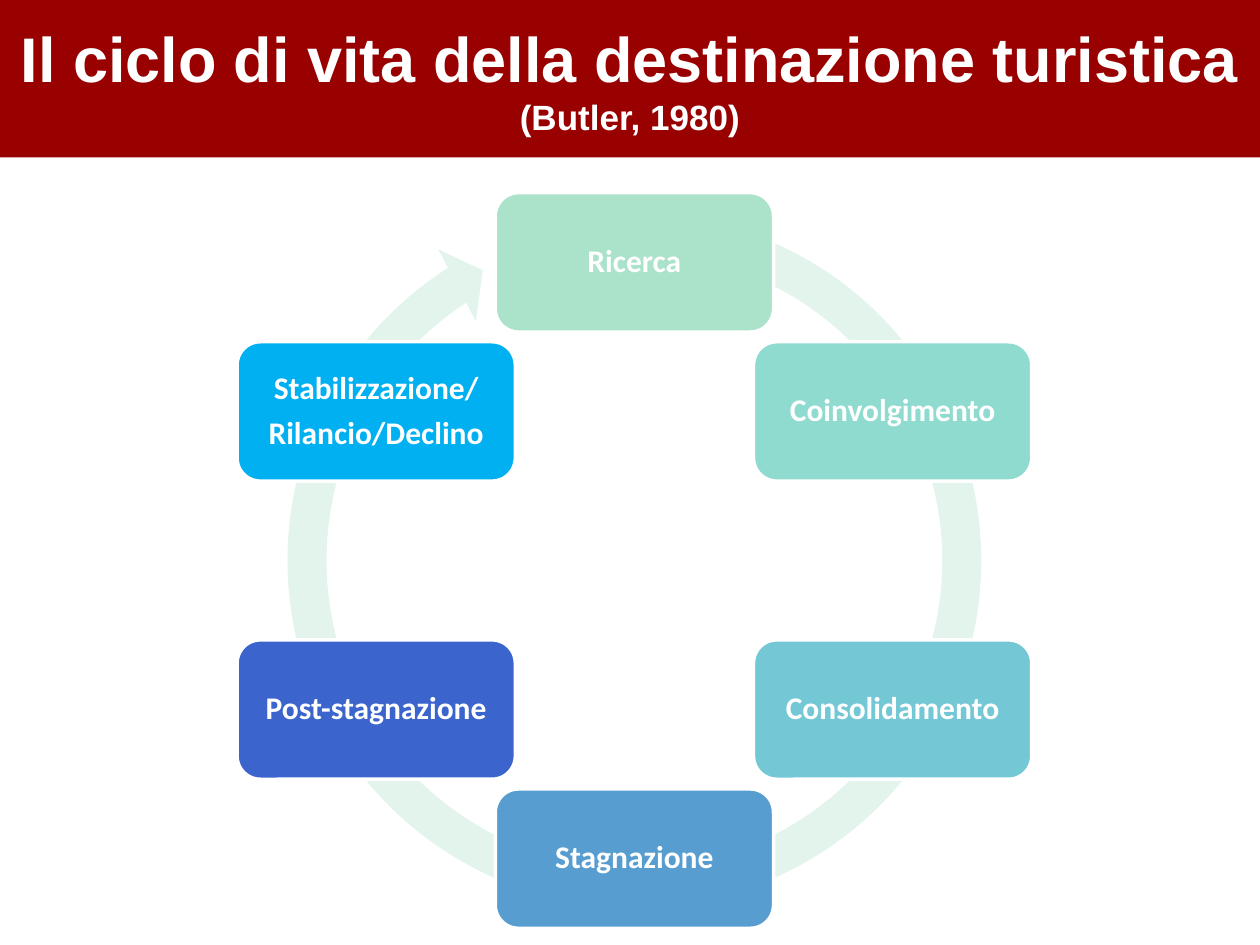
from math import cos, radians, sin

from pptx import Presentation
from pptx.dml.color import RGBColor
from pptx.enum.shapes import MSO_SHAPE as Shape
from pptx.enum.text import MSO_ANCHOR as Anchor, PP_ALIGN as Align
from pptx.util import Cm, Pt

COLORS = {
    "banner": "990000",
    "ring": "E2F4EC",
    "white": "FFFFFF",
    "ricerca": "AAE2CA",
    "coinvolgimento": "90DBD0",
    "consolidamento": "74C7D5",
    "stagnazione": "589DD0",
    "post": "3B65CC",
    "esito": "00B0F0",
}

# Stages run clockwise from the top: colour name and lines of text
STAGES = [
    ("ricerca", ["Ricerca"]),
    ("coinvolgimento", ["Coinvolgimento"]),
    ("consolidamento", ["Consolidamento"]),
    ("stagnazione", ["Stagnazione"]),
    ("post", ["Post-stagnazione"]),
    ("esito", ["Stabilizzazione/", "Rilancio/Declino"]),
]

# Cycle geometry in centimetres
CENTER_X, CENTER_Y = 12.79, 11.3
RADIUS = 6.01
BOX_WIDTH, BOX_HEIGHT = 5.61, 2.81
RING_SIZE = 14.83
RING_ADJUSTMENTS = (0.053, 3.126, 142.325, 171.245, 0.055)


def color(name):
    return RGBColor.from_string(COLORS[name])


def add_box(page, kind, left, top, width, height, fill, line=None):
    box = page.shapes.add_shape(kind, Cm(left), Cm(top), Cm(width), Cm(height))
    box.shadow.inherit = False
    box.fill.solid()
    box.fill.fore_color.rgb = color(fill)
    if line:
        box.line.color.rgb = color(line)
        box.line.width = Pt(2)
    else:
        box.line.fill.background()
    return box


def set_margins(box, horizontal, vertical):
    frame = box.text_frame
    frame.margin_left = frame.margin_right = Cm(horizontal)
    frame.margin_top = frame.margin_bottom = Cm(vertical)
    frame.vertical_anchor = Anchor.MIDDLE
    frame.word_wrap = True


def write(para, text, *, size, font, line_spacing=None, space_after=None):
    para.alignment = Align.CENTER
    para.line_spacing = line_spacing
    para.space_after = space_after
    span = para.add_run()
    span.text = text
    span.font.size = Pt(size)
    span.font.name = font
    span.font.bold = True
    span.font.color.rgb = color("white")


def add_banner(page):
    banner = add_box(page, Shape.RECTANGLE, 0, 0, 25.4, 3.175, "banner")
    set_margins(banner, 0.25, 0.13)
    frame = banner.text_frame
    write(frame.paragraphs[0], "Il ciclo di vita della destinazione turistica",
          size=36, font="Arial")
    write(frame.add_paragraph(), "(Butler, 1980)", size=20, font="Arial")


def add_ring(page):
    ring = add_box(page, Shape.CIRCULAR_ARROW, CENTER_X - RING_SIZE / 2,
                   CENTER_Y - RING_SIZE / 2, RING_SIZE, RING_SIZE, "ring")
    for index, value in enumerate(RING_ADJUSTMENTS):
        ring.adjustments[index] = value


def add_stage(page, angle, fill, lines):
    left = CENTER_X + RADIUS * sin(angle) - BOX_WIDTH / 2
    top = CENTER_Y - RADIUS * cos(angle) - BOX_HEIGHT / 2
    box = add_box(page, Shape.ROUNDED_RECTANGLE, left, top,
                  BOX_WIDTH, BOX_HEIGHT, fill, line="white")
    set_margins(box, 0.18, 0.18)
    frame = box.text_frame
    for index, text in enumerate(lines):
        para = frame.add_paragraph() if index else frame.paragraphs[0]
        write(para, text, size=18, font="Calibri",
              line_spacing=0.9, space_after=Pt(6.3))


def main():
    deck = Presentation()
    deck.slide_width, deck.slide_height = Cm(25.4), Cm(19.05)
    page = deck.slides.add_slide(deck.slide_layouts[6])

    # Title
    add_banner(page)

    # Cycle: arrow behind, stages evenly spaced around it
    add_ring(page)
    for index, (fill, lines) in enumerate(STAGES):
        add_stage(page, radians(index * 360 / len(STAGES)), fill, lines)

    deck.save("out.pptx")


if __name__ == "__main__":
    main()
